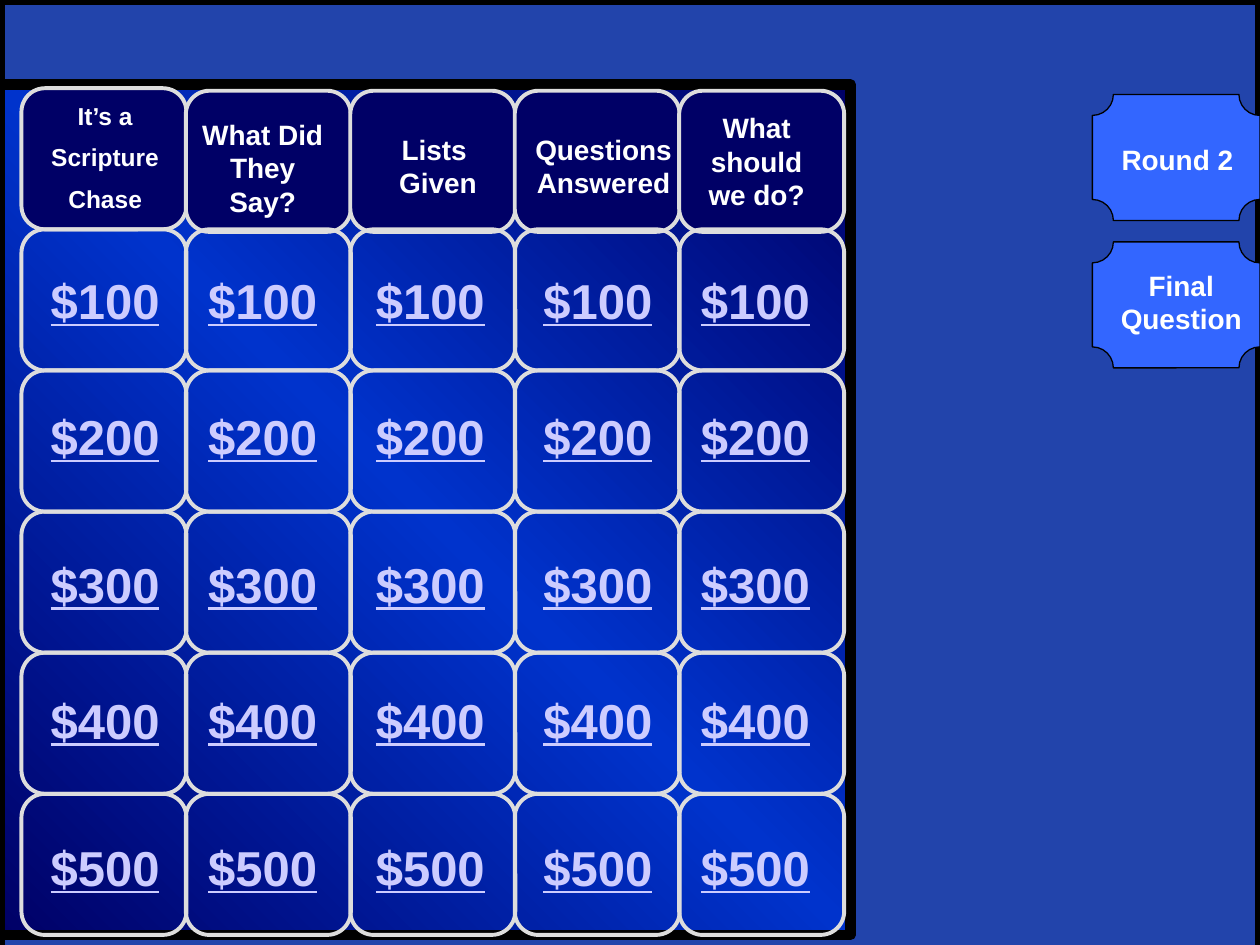
import copy

import lxml.etree
import pptx
import pptx.dml.color
import pptx.enum.shapes
import pptx.enum.text
import pptx.oxml.ns
import pptx.util

Inches = pptx.util.Inches
SHAPES = pptx.enum.shapes.MSO_SHAPE
qn = pptx.oxml.ns.qn

CATEGORIES = [
    (["It’s a", "Scripture", "Chase"], (0.17, 0.75, 1.33, 1.04), {"size": 14}),
    (["What Did", "They Say?"], (1.5, 0.88, 1.17, 0.91), {"spaced": False}),
    (["Lists", " Given"], (3, 1, 0.89, 0.64), {"spaced": False, "wrap": False}),
    (["Questions Answered"], (4.08, 1, 1.42, 0.64), {}),
    (["What should we do?"], (5.42, 0.83, 1.17, 0.91), {}),
]
PRIZES = [("$100", 2.1), ("$200", 3.18), ("$300", 4.35), ("$400", 5.43), ("$500", 6.6)]
PRIZE_LEFTS = [0.17, 1.42, 2.75, 4.08, 5.33]
BUTTONS = [
    ("Round 2", 0.75, (8.66, 1.08, 1.37, 0.37)),
    ("Final Question", 1.92, (8.75, 2.08, 1.25, 0.64)),
]
BOARD_GRADIENT = [(0, "000066"), (0.5, "0033CC"), (1, "000066")]

BOARD_LEFT, BOARD_TOP = 0.17, 0.7
CELL_WIDTH, CELL_HEIGHT = 1.31, 1.12
COLUMN_STEP = 1.305


def rgb(value):
    return pptx.dml.color.RGBColor.from_string(value)


def add_panel(slide, kind, box, fill=None, line="000000", weight=0.75, alpha=None):
    panel = slide.shapes.add_shape(kind, *map(Inches, box))
    panel.shadow.inherit = False
    panel.line.color.rgb = rgb(line)
    panel.line.width = pptx.util.Pt(weight)
    if fill is None:
        panel.fill.background()
    else:
        panel.fill.solid()
        panel.fill.fore_color.rgb = rgb(fill)
    if alpha is not None:
        color = panel.fill._xPr.find(qn("a:solidFill"))[0]
        lxml.etree.SubElement(color, qn("a:alpha"), val=str(alpha * 1000))
    return panel


def paint_gradient(panel, stops, angle):
    panel.fill.gradient()
    panel.fill.gradient_angle = angle
    stop_list = panel.fill._xPr.find(qn("a:gradFill")).find(qn("a:gsLst"))
    stop_list.append(copy.deepcopy(stop_list[0]))
    for stop, (position, color) in zip(panel.fill.gradient_stops, stops):
        stop.position = position
        stop.color.rgb = rgb(color)


def add_text(slide, lines, box, size=16, color="FFFFFF", underline=None, spaced=True, wrap=True):
    label = slide.shapes.add_textbox(*map(Inches, box))
    frame = label.text_frame
    frame.word_wrap = wrap
    frame.auto_size = pptx.enum.text.MSO_AUTO_SIZE.SHAPE_TO_FIT_TEXT
    for index, line in enumerate(lines):
        paragraph = frame.add_paragraph() if index else frame.paragraphs[0]
        paragraph.alignment = pptx.enum.text.PP_ALIGN.CENTER
        if spaced:
            before = lxml.etree.SubElement(paragraph._p.get_or_add_pPr(), qn("a:spcBef"))
            lxml.etree.SubElement(before, qn("a:spcPct"), val="50000")
        run = paragraph.add_run()
        run.text = line
        run.font.name = "Arial"
        run.font.size = pptx.util.Pt(size)
        run.font.bold = True
        run.font.underline = underline
        run.font.color.rgb = rgb(color)


def add_cell(slide, column, top, fill=None):
    box = (BOARD_LEFT + column * COLUMN_STEP, top, CELL_WIDTH, CELL_HEIGHT)
    add_panel(slide, SHAPES.ROUNDED_RECTANGLE, box, fill=fill, line="DDDDDD", weight=2.25)


def main():
    deck = pptx.Presentation()
    deck.slide_width, deck.slide_height = Inches(10), Inches(7.5)
    slide = deck.slides.add_slide(deck.slide_layouts[6])

    add_panel(slide, SHAPES.RECTANGLE, (0, 0, 10, 7.5), fill="000000")
    add_panel(slide, SHAPES.RECTANGLE, (0, 0, 10, 7.58), fill="3366FF", weight=6, alpha=67)
    board = add_panel(slide, SHAPES.RECTANGLE, (0, 0.67, 6.75, 6.75), weight=6)
    paint_gradient(board, BOARD_GRADIENT, 45)

    for column, (lines, box, style) in enumerate(CATEGORIES):
        add_cell(slide, column, BOARD_TOP + (0.02 if column else 0), fill="000066")
    for lines, box, style in CATEGORIES:
        add_text(slide, lines, box, **style)

    for row, (prize, text_top) in enumerate(PRIZES, start=1):
        for column, text_left in enumerate(PRIZE_LEFTS):
            add_cell(slide, column, BOARD_TOP + row * CELL_HEIGHT)
            add_text(slide, [prize], (text_left, text_top, 1.33, 0.57),
                     size=28, color="CCCCFF", underline=True)

    for caption, top, text_box in BUTTONS:
        add_panel(slide, SHAPES.PLAQUE, (8.67, top, 1.33, 1), fill="3366FF")
        add_text(slide, [caption], text_box)

    deck.save("out.pptx")


if __name__ == "__main__":
    main()
